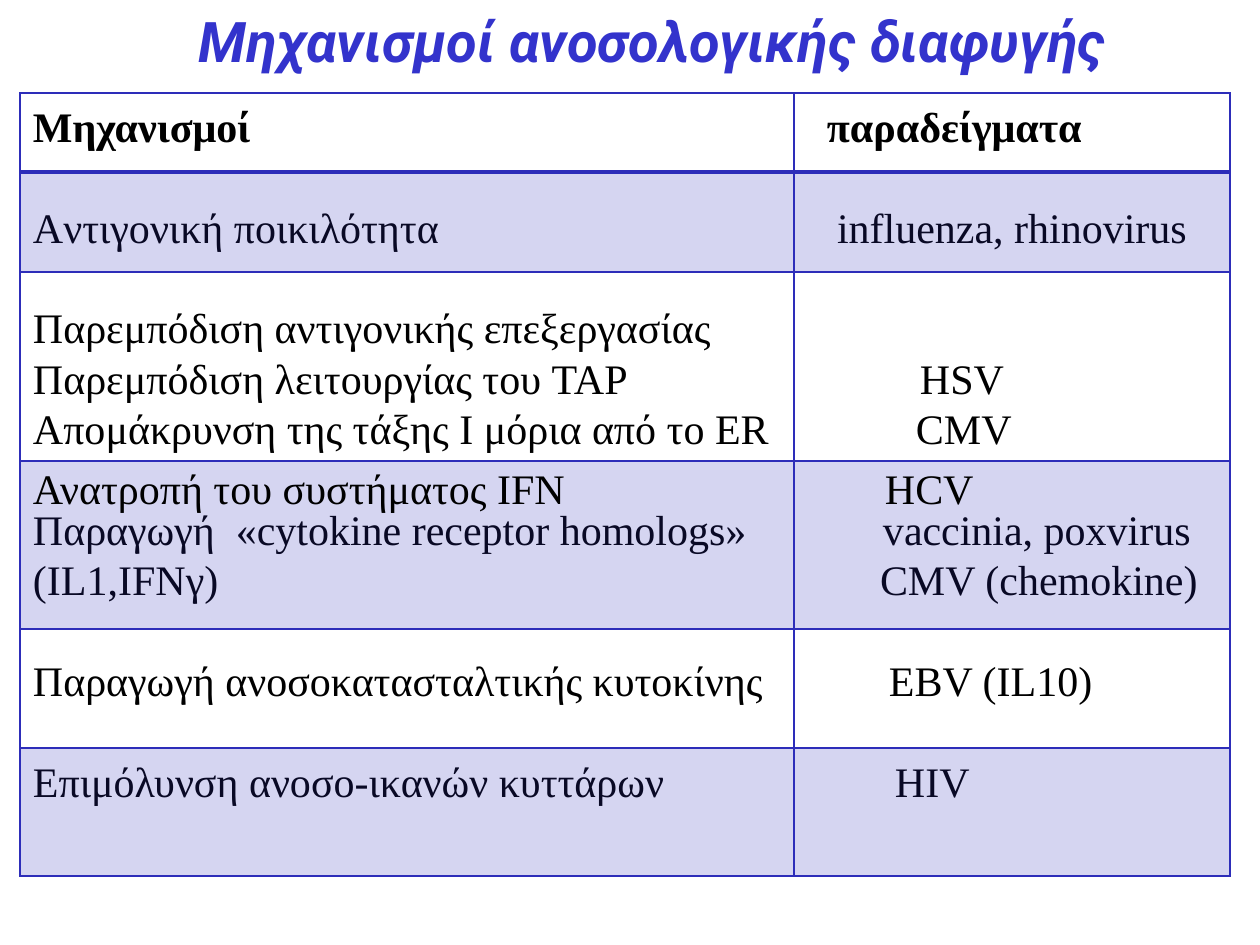
from typing import NamedTuple

from lxml import etree
from pptx import Presentation
from pptx.dml.color import RGBColor
from pptx.enum.text import MSO_ANCHOR, MSO_AUTO_SIZE, PP_ALIGN
from pptx.oxml.ns import qn
from pptx.util import Emu, Pt

TOP, CENTER, LEFT = MSO_ANCHOR.TOP, PP_ALIGN.CENTER, PP_ALIGN.LEFT
FIXED = MSO_AUTO_SIZE.NONE
BLUE = RGBColor(0x33, 0x33, 0xCC)
NAVY = RGBColor(0x2D, 0x2D, 0xB9)
BLACK = RGBColor(0, 0, 0)
SERIF, SANS = "Times New Roman", "Roboto"
SCALE = 914400 / 126
PITCH = 28.8  # points from line to line
START = 20
COLS = (774, 436)
INSET = 13


class Line(NamedTuple):
    text: str
    skip: int = 0  # lines left free above
    indent: int = 0
    bold: bool = False


class Band(NamedTuple):
    height: int
    tint: bool
    texts: tuple[str, str] = ("", "")


NAMES = (
    Line("Mηχανισμοί", bold=True),
    Line("Aντιγονική ποικιλότητα", 1),
    Line("Παρεμπόδιση αντιγονικής επεξεργασίας", 1),
    Line("Παρεμπόδιση λειτουργίας του TAP"),
    Line("Απομάκρυνση της τάξης I μόρια από το ER"),
    Line("Παραγωγή  «cytokine receptor homologs»", 1),
    Line("(IL1,IFNγ)"),
    Line("Παραγωγή ανοσοκατασταλτικής κυτοκίνης", 1),
    Line("Επιμόλυνση ανοσο-ικανών κυττάρων", 1),
)
CASES = (
    Line("παραδείγματα", 0, 20, True),
    Line("influenza, rhinovirus", 1, 30),
    Line("HSV", 2, 113),
    Line("CMV", 0, 109),
    Line("vaccinia, poxvirus", 1, 76),
    Line("CMV (chemokine)", 0, 73),
    Line("EBV (IL10)", 1, 82),
    Line("HIV", 1, 88),
)
BANDS = (
    Band(79, False),
    Band(100, True),
    Band(189, False),
    Band(168, True, ("Ανατροπή του συστήματος IFN", "HCV")),
    Band(119, False),
    Band(128, True),
)


def px(n: int) -> Emu:
    return Emu(round(n * SCALE))


def place(shape, x: int, y: int, w: int, h: int) -> None:
    shape.left, shape.top, shape.width, shape.height = map(px, (x, y, w, h))


def set_frame(frame) -> None:
    frame.word_wrap = True
    frame.auto_size = FIXED
    frame.vertical_anchor = TOP
    frame.margin_left = frame.margin_right = px(INSET)


def add_run(para, text: str, size: int = 24, font: str = SERIF,
            color: RGBColor = BLACK, bold: bool = False,
            slant: bool = False) -> None:
    run = para.add_run()
    run.text = text
    run.font.name, run.font.size = font, Pt(size)
    run.font.bold, run.font.italic = bold, slant
    run.font.color.rgb = color


def add_line(para, line: Line) -> None:
    para.alignment = LEFT
    para.line_spacing = Pt(PITCH)
    para.space_before = Pt(PITCH * line.skip)
    para.space_after = Pt(0)
    props = para._p.get_or_add_pPr()
    props.set("marL", str(px(line.indent)))
    props.set("indent", "0")
    etree.SubElement(props, qn("a:buNone"))
    add_run(para, line.text, bold=line.bold)


def fill_list(body, x: int, width: int, lines: tuple[Line, ...]) -> None:
    place(body, x, 94, width, 729)
    frame = body.text_frame
    set_frame(frame)
    for i, line in enumerate(lines):
        add_line(frame.add_paragraph() if i else frame.paragraphs[0], line)


def set_edges(cell, row: int) -> None:
    """Rule all four sides, thicker below the header row."""
    props = cell._tc.get_or_add_tcPr()
    wide = {"B": row == 0, "T": row == 1}
    for i, side in enumerate("LRTB"):
        width = Pt(2 if wide.get(side) else 1)
        edge = etree.Element(qn(f"a:ln{side}"), w=str(width))
        fill = etree.SubElement(edge, qn("a:solidFill"))
        etree.SubElement(fill, qn("a:srgbClr"), val=str(NAVY))
        props.insert(i, edge)


def set_fill(cell, tint: bool) -> None:
    if not tint:
        cell.fill.background()
        return
    cell.fill.solid()
    cell.fill.fore_color.rgb = NAVY
    color = cell._tc.tcPr.find(qn("a:solidFill")).find(qn("a:srgbClr"))
    etree.SubElement(color, qn("a:alpha"), val="20000")


def add_grid(slide) -> None:
    high = sum(band.height for band in BANDS)
    table = slide.shapes.add_table(
        len(BANDS), len(COLS), px(START), px(93), px(sum(COLS)), px(high)).table
    table.first_row = table.horz_banding = False
    for c, width in enumerate(COLS):
        table.columns[c].width = px(width)
    for r, band in enumerate(BANDS):
        table.rows[r].height = px(band.height)
        for c, text in enumerate(band.texts):
            cell = table.cell(r, c)
            set_fill(cell, band.tint)
            set_edges(cell, r)
            if text:
                cell.margin_left = px((INSET, 91)[c])
                add_run(cell.text_frame.paragraphs[0], text)


def main() -> None:
    deck = Presentation()
    deck.slide_width, deck.slide_height = px(1260), px(945)
    slide = deck.slides.add_slide(deck.slide_layouts[3])

    title = slide.shapes.title
    place(title, 65, 0, 1176, 81)
    set_frame(title.text_frame)
    head = title.text_frame.paragraphs[0]
    head.alignment = CENTER
    add_run(head, "Mηχανισμοί ανοσολογικής διαφυγής", 32, SANS, BLUE, True, True)

    fill_list(slide.placeholders[1], START, COLS[0], NAMES)
    fill_list(slide.placeholders[2], START + COLS[0], COLS[1], CASES)
    add_grid(slide)
    deck.save("out.pptx")


if __name__ == "__main__":
    main()
